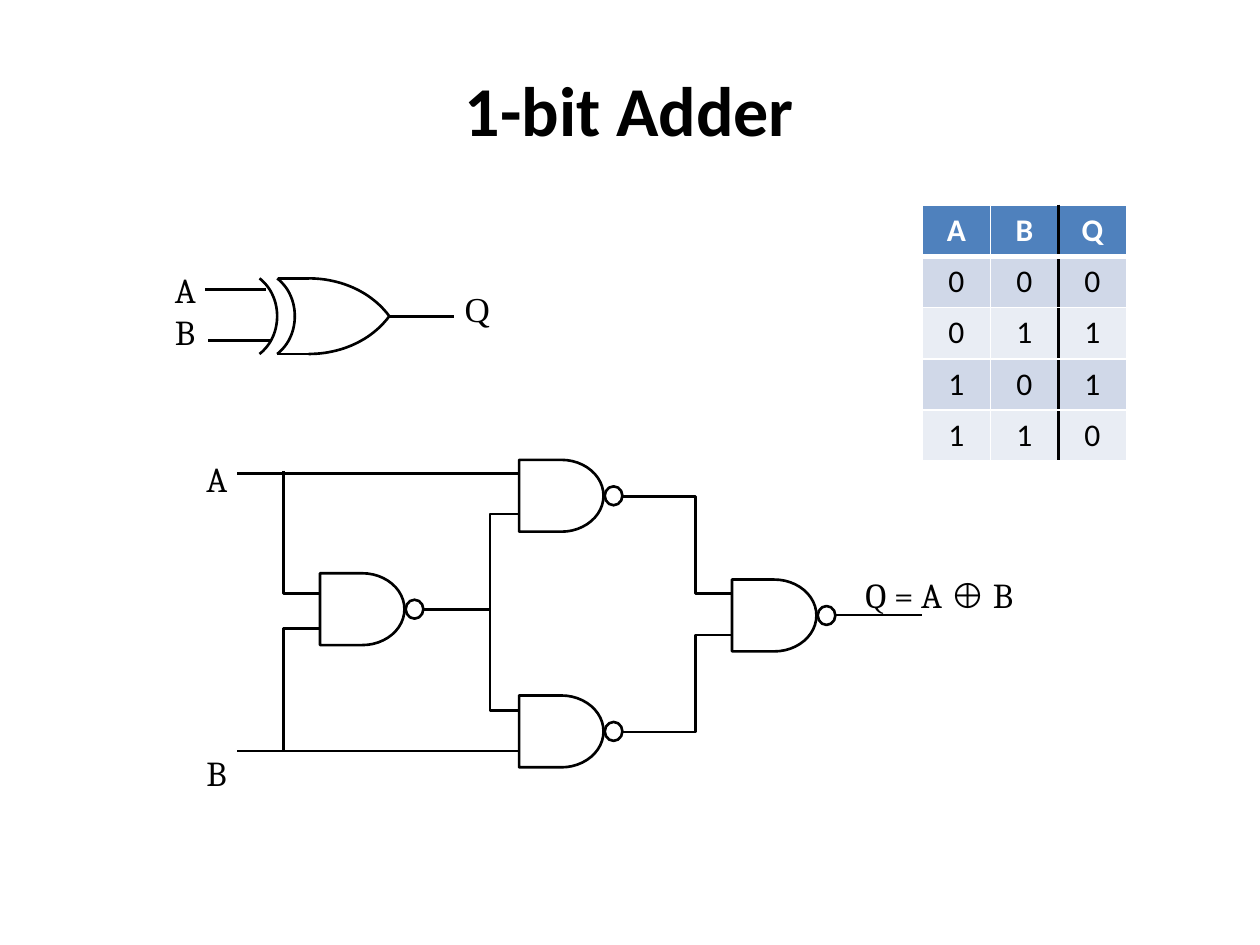
from lxml import etree
from pptx import Presentation
from pptx.dml.color import RGBColor
from pptx.enum.shapes import MSO_CONNECTOR, MSO_SHAPE
from pptx.enum.text import PP_ALIGN
from pptx.oxml.ns import qn
from pptx.util import Pt

BLACK = RGBColor(0x00, 0x00, 0x00)
WHITE = RGBColor(0xFF, 0xFF, 0xFF)
HEADER_BLUE = RGBColor(0x4F, 0x81, 0xBD)
BAND_DARK = RGBColor(0xD0, 0xD8, 0xE8)
BAND_LIGHT = RGBColor(0xE9, 0xED, 0xF4)

PX = 9144
LINE_WIDTH = Pt(1.5)
CURVE_STEPS = 24
SANS, SERIF, ROMAN = "Calibri", "Cambria", "Times New Roman"

TITLE = ("1-bit Adder", (295, 48, 409, 77))
LABELS = [
    ((129, 208, 43, 78), 0, [[("A", SERIF)], [("B", SERIF)]]),
    ((359, 223, 47, 45), 0, [[("Q", ROMAN)]]),
    ((154, 358, 51, 270), 144, [[("A", SERIF)], [("B", SERIF)]]),
    ((677, 450, 155, 53), 0, [[("Q = A ", SERIF), ("⊕", ROMAN), (" B", SERIF)]]),
]
XOR_AXIS = 251
XOR_CURVES = [
    [(245, 221), (271, 221), (295, 232), (309, 251)],
    [(220, 221), (229, 228), (234, 239), (234, 251)],
    [(206, 221), (215, 228), (220, 239), (220, 251)],
]
XOR_LINES = [
    (221, 221, 245, 221), (220, 281, 245, 281),
    (211, 230, 163, 230), (214, 270, 165, 270), (309, 251, 360, 251),
]
NAND_GATES = [(254, 455), (412, 365), (581, 460), (412, 552)]
NAND_LINES = [
    (662, 488, 732, 488), (411, 596, 188, 596),
    (411, 376, 188, 376), (335, 484, 389, 484),
]
NAND_WIRES = [
    [(580, 504), (552, 504), (552, 581), (493, 581)],
    [(580, 471), (552, 471), (552, 394), (493, 394)],
    [(411, 408), (389, 408), (389, 564), (411, 564)],
    [(253, 499), (225, 499), (225, 596)],
    [(253, 471), (225, 471), (225, 374)],
]
TRUTH_TABLE = ["ABQ", "000", "011", "101", "110"]
TABLE_BOX = (732, 163, 162, 203)


def emu(values):
    return [round(value * PX) for value in values]


def add_run(paragraph, text, font, size, color=BLACK, bold=False):
    run = paragraph.add_run()
    run.text = text
    run.font.name = font
    run.font.size = Pt(size)
    run.font.bold = bold
    run.font.color.rgb = color


def add_title(slide, text, box):
    frame = slide.shapes.add_textbox(*emu(box)).text_frame
    frame.word_wrap = True
    frame.paragraphs[0].alignment = PP_ALIGN.CENTER
    add_run(frame.paragraphs[0], text, SANS, 40, bold=True)


def add_label(slide, box, gap, lines):
    frame = slide.shapes.add_textbox(*emu(box)).text_frame
    frame.word_wrap = True
    for index, runs in enumerate(lines):
        paragraph = frame.add_paragraph() if index else frame.paragraphs[0]
        if index:
            paragraph.space_before = Pt(gap)
        for text, font in runs:
            add_run(paragraph, text, font, 20)


def style_outline(shape):
    shape.shadow.inherit = False
    shape.line.color.rgb = BLACK
    shape.line.width = LINE_WIDTH


def add_wire(slide, points):
    start, *rest = [tuple(emu(point)) for point in points]
    builder = slide.shapes.build_freeform(*start)
    builder.add_line_segments(rest, close=False)
    shape = builder.convert_to_shape()
    shape.fill.background()
    style_outline(shape)


def bezier(controls):
    points = []
    for step in range(CURVE_STEPS + 1):
        t = step / CURVE_STEPS
        weights = ((1 - t) ** 3, 3 * t * (1 - t) ** 2, 3 * t * t * (1 - t), t ** 3)
        points.append([sum(w * v for w, v in zip(weights, axis)) for axis in zip(*controls)])
    return points


def add_line(slide, ends):
    line = slide.shapes.add_connector(MSO_CONNECTOR.STRAIGHT, *emu(ends))
    line.line.color.rgb = BLACK
    line.line.width = LINE_WIDTH
    etree.SubElement(line._element.spPr, qn("a:effectLst"))


def add_nand(slide, left, top):
    for kind, box in (
        (MSO_SHAPE.FLOWCHART_DELAY, (left, top, 67, 57)),
        (MSO_SHAPE.OVAL, (left + 68, top + 21, 14, 15)),
    ):
        shape = slide.shapes.add_shape(kind, *emu(box))
        shape.fill.solid()
        shape.fill.fore_color.rgb = WHITE
        style_outline(shape)


def set_border(cell, side, color, width):
    border = etree.SubElement(cell._tc.get_or_add_tcPr(), qn(f"a:ln{side}"), w=str(Pt(width)))
    fill = etree.SubElement(border, qn("a:solidFill"))
    etree.SubElement(fill, qn("a:srgbClr"), val=str(color))


def add_truth_table(slide):
    rows, columns = len(TRUTH_TABLE), len(TRUTH_TABLE[0])
    table = slide.shapes.add_table(rows, columns, *emu(TABLE_BOX)).table
    thin, divider, heavy = (WHITE, 1), (BLACK, 2.25), (WHITE, 3)
    for row, values in enumerate(TRUTH_TABLE):
        header = row == 0
        for column, value in enumerate(values):
            cell = table.cell(row, column)
            borders = {
                "L": divider if column == columns - 1 else thin,
                "R": divider if column == columns - 2 else thin,
                "T": heavy if row == 1 else thin,
                "B": heavy if header else thin,
            }
            for side, (color, width) in borders.items():
                set_border(cell, side, color, width)
            cell.fill.solid()
            band = BAND_DARK if row % 2 else BAND_LIGHT
            cell.fill.fore_color.rgb = HEADER_BLUE if header else band
            paragraph = cell.text_frame.paragraphs[0]
            paragraph.alignment = PP_ALIGN.CENTER
            add_run(paragraph, value, SANS, 18, WHITE if header else BLACK, header)


def main():
    presentation = Presentation()
    presentation.slide_width, presentation.slide_height = emu((1000, 750))
    slide = presentation.slides.add_slide(presentation.slide_layouts[6])
    add_title(slide, *TITLE)
    for curve in XOR_CURVES:
        mirrored = [(x, 2 * XOR_AXIS - y) for x, y in curve]
        for controls in (curve, mirrored):
            add_wire(slide, bezier(controls))
    for gate in NAND_GATES:
        add_nand(slide, *gate)
    for ends in XOR_LINES + NAND_LINES:
        add_line(slide, ends)
    for points in NAND_WIRES:
        add_wire(slide, points)
    for label in LABELS:
        add_label(slide, *label)
    add_truth_table(slide)
    presentation.save("out.pptx")


if __name__ == "__main__":
    main()
